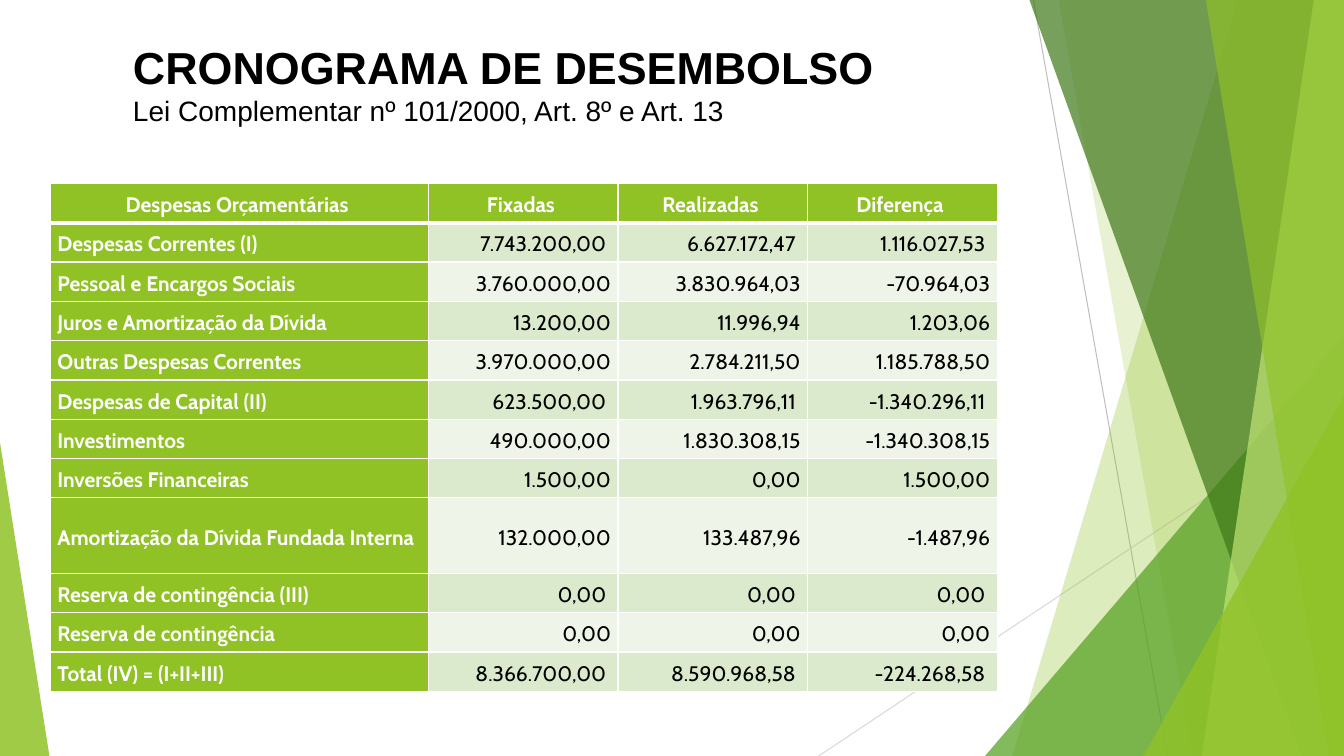
"""Build the disbursement schedule slide with its green facets and expense table."""
from lxml import etree
from pptx import Presentation
from pptx import util as u
from pptx.dml.color import RGBColor
from pptx.enum import shapes, text
from pptx.oxml.ns import qn

WIDTH, HEIGHT = 13.33, 7.5
EXPENSES = [
    ("Despesas Orçamentárias ", "Fixadas ", "Realizadas ", "Diferença "),
    ("Despesas Correntes (I)", "7.743.200,00 ", "6.627.172,47 ", "1.116.027,53 "),
    ("Pessoal e Encargos Sociais", "3.760.000,00", "3.830.964,03", "-70.964,03"),
    ("Juros e Amortização da Dívida", "13.200,00", "11.996,94", "1.203,06"),
    ("Outras Despesas Correntes", "3.970.000,00", "2.784.211,50", "1.185.788,50"),
    ("Despesas de Capital (II)", "623.500,00 ", "1.963.796,11 ", "-1.340.296,11 "),
    ("Investimentos", "490.000,00", "1.830.308,15", "-1.340.308,15"),
    ("Inversões Financeiras", "1.500,00", "0,00", "1.500,00"),
    ("Amortização da Dívida Fundada Interna", "132.000,00", "133.487,96", "-1.487,96"),
    ("Reserva de contingência (III)", "0,00 ", "0,00 ", "0,00 "),
    ("Reserva de contingência", "0,00", "0,00", "0,00"),
    ("Total (IV) = (I+II+III)", "8.366.700,00 ", "8.590.968,58 ", "-224.268,58 "),
]


def color(value):
    return RGBColor.from_string(value)


class SlideBuilder:
    green, white, black = "90C226", "FFFFFF", "000000"
    bands = ("EEF4E8", "DBE9CD")
    title_font, table_font = "Arial", "Cabin"

    def __init__(self, slide):
        self.slide = slide

    def line(self, start, end, line_color):
        points = [u.Inches(value) for value in (*start, *end)]
        connector = self.slide.shapes.add_connector(shapes.MSO_CONNECTOR.STRAIGHT, *points)
        connector.line.color.rgb = color(line_color)
        connector.line.width = u.Pt(0.75)
        etree.SubElement(connector.element.spPr, qn("a:effectLst"))

    def paint(self, shape, fill, opacity):
        shape.shadow.inherit = False
        shape.line.fill.background()
        shape.fill.solid()
        shape.fill.fore_color.rgb = color(fill)
        fill_color = shape.element.spPr.find(qn("a:solidFill"))[0]
        etree.SubElement(fill_color, qn("a:alpha"), val=str(opacity * 1000))

    def facet(self, top_left, top_right, bottom_left, fill, opacity):
        corners = [(top_left, 0), (top_right, 0), (WIDTH, HEIGHT), (bottom_left, HEIGHT)]
        points = [(u.Inches(x), u.Inches(y)) for x, y in corners]
        builder = self.slide.shapes.build_freeform(*points[0])
        builder.add_line_segments(points[1:], close=True)
        self.paint(builder.convert_to_shape(), fill, opacity)

    def triangle(self, left, top, width, apex, fill, opacity):
        box = [u.Inches(value) for value in (left, top, width, HEIGHT - top)]
        shape = self.slide.shapes.add_shape(shapes.MSO_SHAPE.ISOSCELES_TRIANGLE, *box)
        shape.adjustments[0] = apex
        self.paint(shape, fill, opacity)

    def run(self, paragraph, words, font, size, font_color, bold):
        run = paragraph.add_run()
        run.text = words
        run.font.name = font
        run.font.size = u.Pt(size)
        run.font.bold = bold
        run.font.color.rgb = color(font_color)

    def heading(self, box, lines):
        shape = self.slide.shapes.add_textbox(*[u.Inches(value) for value in box])
        frame = shape.text_frame
        frame.word_wrap = True
        frame.vertical_anchor = text.MSO_ANCHOR.TOP
        frame.margin_top = u.Inches(0.08)
        for index, (words, size, bold) in enumerate(lines):
            paragraph = frame.add_paragraph() if index else frame.paragraphs[0]
            self.run(paragraph, words, self.title_font, size, self.black, bold)

    def borders(self, cell, top, bottom):
        properties = cell._tc.get_or_add_tcPr()
        sides = (("lnL", 1), ("lnR", 1), ("lnT", top), ("lnB", bottom))
        for index, (side, width) in enumerate(sides):
            border = etree.Element(qn(f"a:{side}"), w=str(u.Pt(width)))
            fill = etree.SubElement(border, qn("a:solidFill"))
            etree.SubElement(fill, qn("a:srgbClr"), val=self.white)
            properties.insert(index, border)

    def cell(self, cell, words, row, column):
        labelled = row == 0 or column == 0
        cell.fill.solid()
        cell.fill.fore_color.rgb = color(self.green if labelled else self.bands[row % 2])
        self.borders(cell, 3 if row == 1 else 1, 3 if row == 0 else 1)
        cell.vertical_anchor = text.MSO_ANCHOR.MIDDLE
        cell.margin_left = cell.margin_right = u.Inches(0.07)
        cell.margin_top = cell.margin_bottom = u.Inches(0.01)
        paragraph = cell.text_frame.paragraphs[0]
        paragraph.line_spacing = 1.15
        if row == 0:
            paragraph.alignment = text.PP_ALIGN.CENTER
        else:
            paragraph.alignment = text.PP_ALIGN.RIGHT if column else text.PP_ALIGN.LEFT
        font_color = self.white if labelled else self.black
        self.run(paragraph, words, self.table_font, 15, font_color, labelled)

    def table(self, left, top, widths, heights, rows):
        box = [u.Inches(value) for value in (left, top, sum(widths), sum(heights))]
        table = self.slide.shapes.add_table(len(rows), len(widths), *box).table
        for column, width in zip(table.columns, widths):
            column.width = u.Inches(width)
        for row, height in zip(table.rows, heights):
            row.height = u.Inches(height)
        for row, values in enumerate(rows):
            for column, words in enumerate(values):
                self.cell(table.cell(row, column), words, row, column)


def main():
    presentation = Presentation()
    presentation.slide_width = u.Inches(WIDTH)
    presentation.slide_height = u.Inches(HEIGHT)
    builder = SlideBuilder(presentation.slides.add_slide(presentation.slide_layouts[6]))

    builder.line((10.25, 0), (11.58, HEIGHT), "BFBFBF")
    builder.line((WIDTH, 4.03), (8.12, HEIGHT), "D9D9D9")
    builder.facet(12.28, WIDTH, 10.04, builder.green, 30)
    builder.facet(10.5, WIDTH, 11.83, builder.green, 20)
    builder.triangle(9.77, 3.33, 3.56, 1, "54A021", 72)
    builder.facet(10.21, WIDTH, 12.91, "3F7819", 70)
    builder.facet(13.03, WIDTH, 11.92, "C0E474", 70)
    builder.facet(11.96, WIDTH, 13.18, builder.green, 65)
    builder.triangle(11.34, 3.93, 1.99, 1, builder.green, 80)
    builder.triangle(0, 4.39, 0.49, 0, builder.green, 85)

    heights = [0.75 if "Fundada" in row[0] else 0.39 for row in EXPENSES]
    builder.table(0.5, 1.82, [3.75] + [1.88] * 3, heights, EXPENSES)
    builder.heading((1.22, 0.31, 8.92, 1.28), [
        ("CRONOGRAMA DE DESEMBOLSO", 32, True),
        ("Lei Complementar nº 101/2000, Art. 8º e Art. 13", 20, False),
    ])
    presentation.save("out.pptx")


if __name__ == "__main__":
    main()
